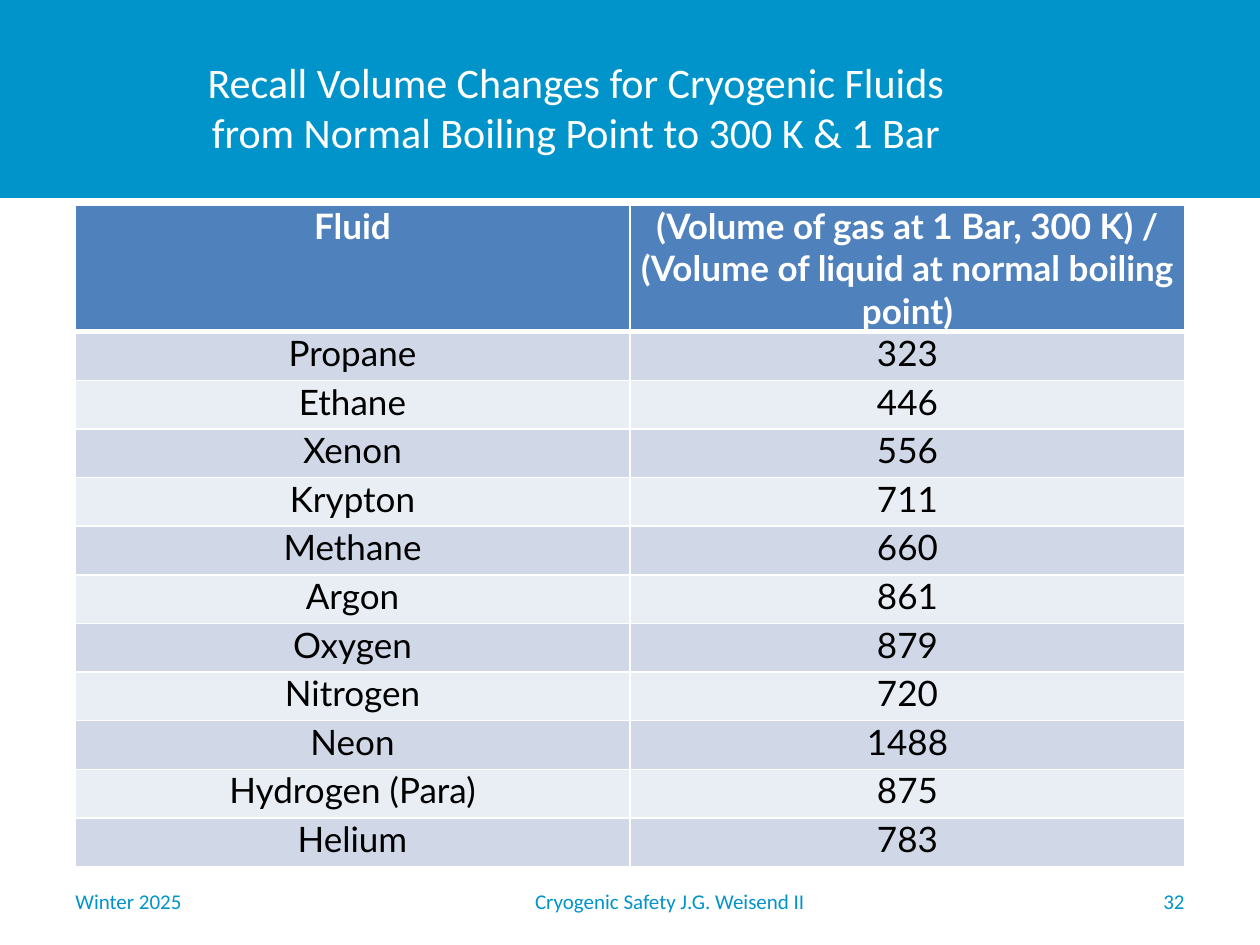
import dataclasses

import lxml.etree
import pptx
import pptx.dml.color
import pptx.enum.shapes
import pptx.enum.text
import pptx.oxml.ns
import pptx.util

PX = pptx.util.Inches(1) / 126
ALIGN = pptx.enum.text.PP_ALIGN


@dataclasses.dataclass(frozen=True)
class Theme:
    brand: str = "0094CA"
    header: str = "4F81BD"
    bands: tuple = ("D0D8E8", "E9EDF4")
    white: str = "FFFFFF"
    black: str = "000000"
    font: str = "Calibri"
    table_font: str = "Lato"
    title_size: int = 24
    table_size: int = 20
    footer_size: int = 12


THEME = Theme()
TITLE_LINES = (
    "Recall Volume Changes for Cryogenic Fluids",
    "from Normal Boiling Point to 300 K & 1 Bar",
)
HEADINGS = (
    "Fluid",
    "(Volume of gas at 1 Bar, 300 K) / (Volume of liquid at normal boiling point)",
)
VOLUME_RATIOS = (
    ("Propane", 323),
    ("Ethane", 446),
    ("Xenon", 556),
    ("Krypton", 711),
    ("Methane", 660),
    ("Argon", 861),
    ("Oxygen", 879),
    ("Nitrogen", 720),
    ("Neon", 1488),
    ("Hydrogen (Para)", 875),
    ("Helium", 783),
)


def px(length):
    return pptx.util.Emu(round(length * PX))


def rgb(value):
    return pptx.dml.color.RGBColor.from_string(value)


def add_span(para, text, font, size, color, bold=False):
    span = para.add_run()
    span.text = text
    span.font.name = font
    span.font.size = pptx.util.Pt(size)
    span.font.bold = bold
    span.font.color.rgb = rgb(color)


def add_title(page, box, title_box):
    """Fill the band given by box and set the title in title_box, relative to it."""
    left, top, width, height = box
    band = page.shapes.add_shape(
        pptx.enum.shapes.MSO_SHAPE.RECTANGLE, *map(px, box))
    band.shadow.inherit = False
    band.fill.solid()
    band.fill.fore_color.rgb = rgb(THEME.brand)
    band.line.fill.background()

    title = page.shapes.title
    title.element.addprevious(band.element)
    title.left, title.top = px(left + title_box[0]), px(top + title_box[1])
    title.width, title.height = px(title_box[2]), px(title_box[3])
    frame = title.text_frame
    frame.margin_left = frame.margin_right = 0
    frame.margin_top = frame.margin_bottom = 0
    frame.vertical_anchor = pptx.enum.text.MSO_ANCHOR.MIDDLE
    frame.auto_size = pptx.enum.text.MSO_AUTO_SIZE.NONE
    para = frame.paragraphs[0]
    para.alignment = ALIGN.CENTER
    for index, line in enumerate(TITLE_LINES):
        if index:
            para.add_line_break()
        add_span(para, line, THEME.font, THEME.title_size, THEME.white)


def set_borders(cell, top, bottom):
    """Draw white borders; top and bottom are widths in points."""
    properties = cell._tc.get_or_add_tcPr()
    for side, width in (("L", 1), ("R", 1), ("T", top), ("B", bottom)):
        line = lxml.etree.SubElement(
            properties, pptx.oxml.ns.qn(f"a:ln{side}"), w=str(pptx.util.Pt(width)))
        fill = lxml.etree.SubElement(line, pptx.oxml.ns.qn("a:solidFill"))
        lxml.etree.SubElement(fill, pptx.oxml.ns.qn("a:srgbClr"), val=THEME.white)


def add_ratio_table(page, box, header_height):
    left, top, width, height = box
    rows = (HEADINGS,) + VOLUME_RATIOS
    table = page.shapes.add_table(len(rows), len(HEADINGS), *map(px, box)).table
    for column in table.columns:
        column.width = px(width / len(HEADINGS))
    body_height = (height - header_height) / len(VOLUME_RATIOS)

    for index, values in enumerate(rows):
        is_header = index == 0
        table.rows[index].height = px(header_height if is_header else body_height)
        fill = THEME.header if is_header else THEME.bands[(index - 1) % 2]
        color = THEME.white if is_header else THEME.black
        for column, value in enumerate(values):
            cell = table.cell(index, column)
            cell.margin_left = cell.margin_right = px(9)
            cell.margin_top = cell.margin_bottom = 0
            set_borders(cell, 3 if index == 1 else 1, 3 if is_header else 1)
            cell.fill.solid()
            cell.fill.fore_color.rgb = rgb(fill)
            para = cell.text_frame.paragraphs[0]
            para.alignment = ALIGN.CENTER
            add_span(para, str(value), THEME.table_font, THEME.table_size,
                     color, is_header)


def add_footer(page, box):
    left, top, width, height = box
    parts = (
        ("Winter 2025", 0, 294, ALIGN.LEFT),
        ("Cryogenic Safety J.G. Weisend II", 368, 478, ALIGN.CENTER),
        ("32", width - 294, 294, ALIGN.RIGHT),
    )
    for text, offset, part_width, alignment in parts:
        label = page.shapes.add_textbox(
            px(left + offset), px(top), px(part_width), px(height))
        frame = label.text_frame
        frame.word_wrap = True
        frame.vertical_anchor = pptx.enum.text.MSO_ANCHOR.MIDDLE
        para = frame.paragraphs[0]
        para.alignment = alignment
        add_span(para, text, THEME.font, THEME.footer_size, THEME.brand)


def main():
    deck = pptx.Presentation()
    deck.slide_width, deck.slide_height = px(1260), px(945)
    page = deck.slides.add_slide(deck.slide_layouts.get_by_name("Title Only"))
    add_title(page, (0, 0, 1260, 198), (84, 28, 984, 157))
    add_ratio_table(page, (75, 205, 1110, 661), header_height=126)
    add_footer(page, (63, 876, 1134, 50))
    deck.save("out.pptx")


if __name__ == "__main__":
    main()
